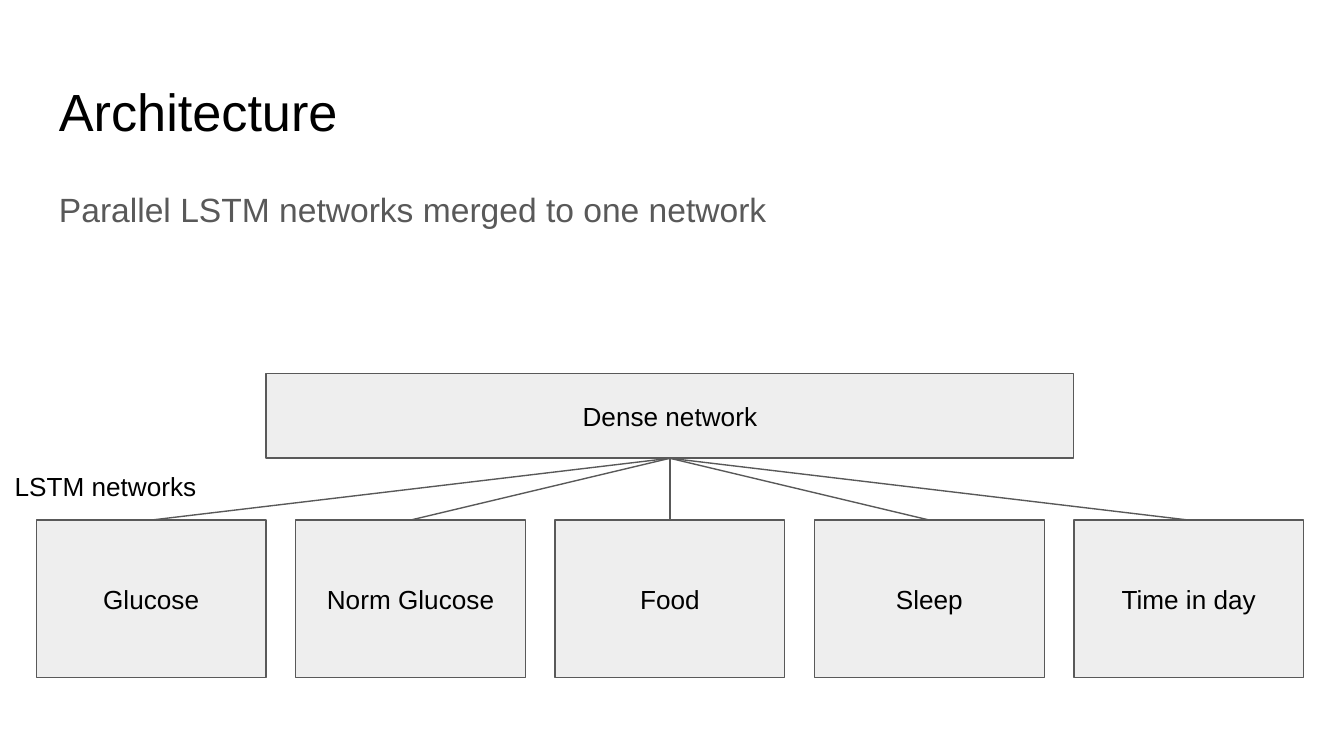
from lxml.etree import SubElement
from pptx import Presentation
from pptx.dml.color import RGBColor
from pptx.enum.shapes import MSO_CONNECTOR as Connector, MSO_SHAPE as Shape
from pptx.enum.text import MSO_ANCHOR as Anchor, PP_ALIGN as Align
from pptx.oxml.ns import qn
from pptx.util import Inches, Pt

WIDTH = 10
HEIGHT = WIDTH * 9 / 16
BLACK, GREY, PALE = "000000", "595959", "EEEEEE"
INPUTS = ["Glucose", "Norm Glucose", "Food", "Sleep", "Time in day"]

# Grid of the input networks
LEFT, PITCH, BOX_W, BOX_H = 0.27, 1.93, 1.71, 1.17
BOX_TOP = 3.87
DENSE_TOP, DENSE_H = 2.78, 0.63


def color(value):
    return RGBColor.from_string(value)


def set_attrs(obj, values):
    for name, value in values.items():
        setattr(obj, name, value)


def write(shape, text, size, ink=BLACK, anchor=Anchor.TOP, **paragraph):
    tf = shape.text_frame
    margins = {f"margin_{side}": Inches(0.1)
               for side in ("left", "top", "right", "bottom")}
    set_attrs(tf, {"word_wrap": True, "vertical_anchor": anchor, **margins})
    p = tf.paragraphs[0]
    set_attrs(p, {"alignment": Align.LEFT, **paragraph})
    r = p.add_run()
    r.text = text
    set_attrs(r.font, {"name": "Arial", "size": Pt(size)})
    r.font.color.rgb = color(ink)


def add_text(s, box, text, size, **options):
    write(s.shapes.add_textbox(*map(Inches, box)), text, size, **options)


def outline(shape):
    shape.line.color.rgb = color(GREY)
    shape.line.width = Pt(0.75)


def add_network(s, box, text):
    sp = s.shapes.add_shape(Shape.RECTANGLE, *map(Inches, box))
    sp.shadow.inherit = False
    sp.fill.solid()
    sp.fill.fore_color.rgb = color(PALE)
    outline(sp)
    write(sp, text, 14, anchor=Anchor.MIDDLE, alignment=Align.CENTER)
    return sp


def link(s, lower, upper):
    """Join the top middle of one box to the bottom middle of another."""
    line = s.shapes.add_connector(Connector.STRAIGHT, 0, 0, 0, 0)
    line.begin_connect(lower, 0)
    line.end_connect(upper, 2)
    outline(line)
    SubElement(line._element.spPr, qn("a:effectLst"))


def main():
    prs = Presentation()
    set_attrs(prs, {"slide_width": Inches(WIDTH),
                    "slide_height": Inches(HEIGHT)})
    s = prs.slides.add_slide(prs.slide_layouts[6])

    add_text(s, (0.34, 0.49, 9.32, 0.63), "Architecture", 28)
    add_text(s, (0.34, 1.26, 9.32, 3.74),
             "Parallel LSTM networks merged to one network", 18,
             ink=GREY, line_spacing=1.15)

    inputs = [add_network(s, (LEFT + i * PITCH, BOX_TOP, BOX_W, BOX_H), name)
              for i, name in enumerate(INPUTS)]
    # The dense network spans the gap between the outer inputs
    dense_left = LEFT + BOX_W
    dense_right = LEFT + (len(INPUTS) - 1) * PITCH
    dense = add_network(s, (dense_left, DENSE_TOP,
                            dense_right - dense_left, DENSE_H),
                        "Dense network")
    for box in inputs:
        link(s, box, dense)

    add_text(s, (0.01, 3.4, 1.65, 0.52), "LSTM networks", 14)
    prs.save("out.pptx")


if __name__ == "__main__":
    main()
